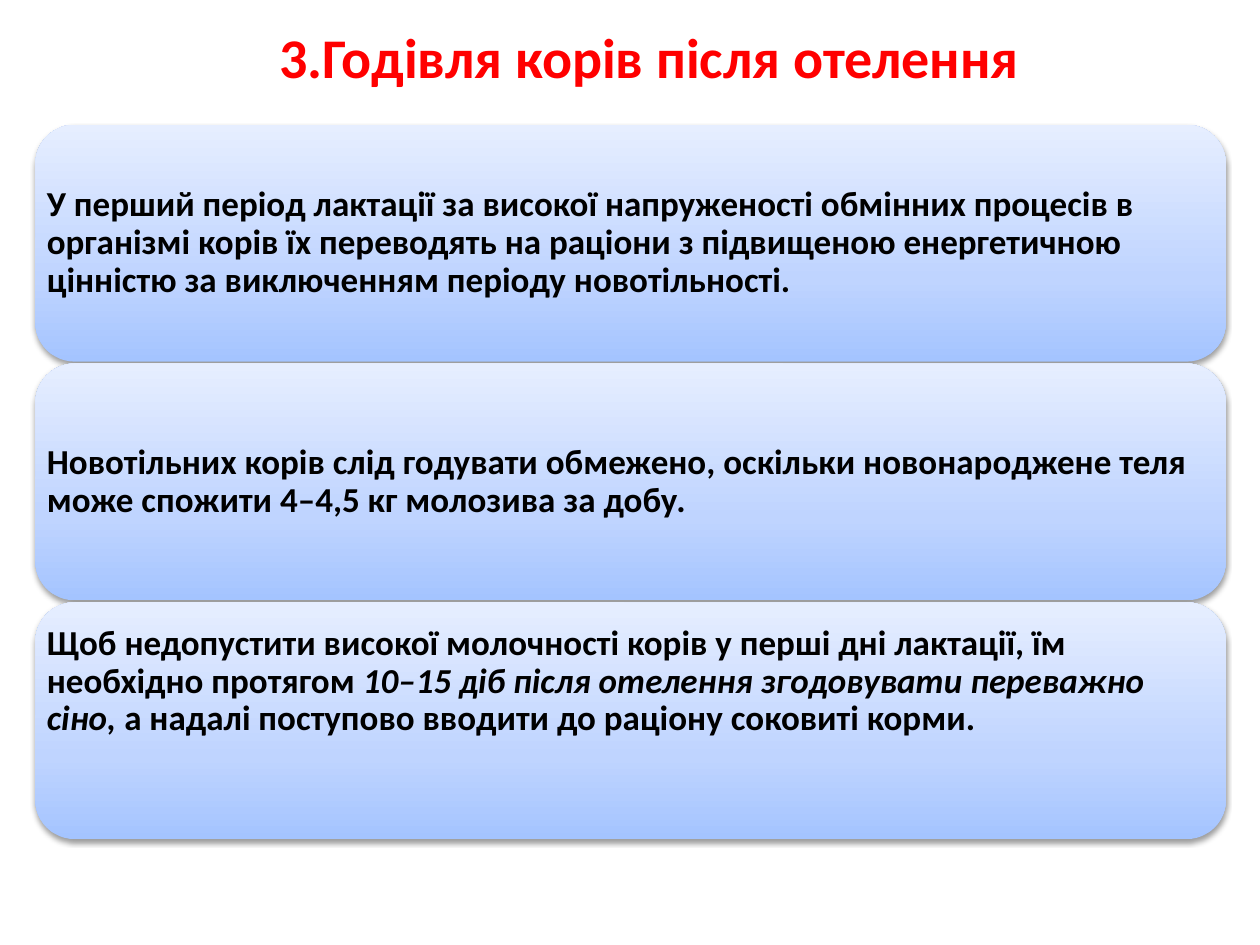
import pptx
import pptx.util
import pptx.dml.color
import pptx.enum.shapes
import pptx.enum.text
import pptx.oxml
import pptx.oxml.ns

Inches, Pt = pptx.util.Inches, pptx.util.Pt
RGB = pptx.dml.color.RGBColor.from_string
NAMESPACE = pptx.oxml.ns.nsdecls("a")

THEME = {
    "font": "Calibri",
    "title_size": Pt(32),
    "title_color": RGB("FF0000"),
    "body_size": Pt(20),
    "body_color": RGB("000000"),
    "gradient": [(0, "A4C4FF"), (35, "BFD4FF"), (100, "E6EEFF")],
}

# Each card holds (text, italic) runs and the extra space kept below its text.
CARDS = [
    ([("У перший період лактації за високої напруженості обмінних процесів в "
       "організмі корів їх переводять на раціони з підвищеною енергетичною "
       "цінністю за виключенням періоду новотільності.", False)], 0),
    ([("Новотільних корів слід годувати обмежено, оскільки новонароджене теля "
       "може спожити 4–4,5 кг молозива за добу.", False)], 0),
    ([("Щоб недопустити високої молочності корів у перші дні лактації, їм "
       "необхідно протягом ", False),
      ("10–15 діб після отелення згодовувати переважно сіно,", True),
      (" а надалі поступово вводити до раціону соковиті корми.", False)], 0.62),
]
CARD_LEFT, CARD_TOP, CARD_WIDTH, CARD_HEIGHT = 0.28, 0.99, 9.45, 1.88
ROW_PITCH = 1.895


def style_card(shape):
    """Give the card a vertical gradient, no outline and a soft shadow."""
    shape.line.fill.background()
    shape.fill.gradient()
    shape.fill.gradient_angle = 90
    stops = shape._element.spPr.find(".//" + pptx.oxml.ns.qn("a:gsLst"))
    for stop in list(stops):
        stops.remove(stop)
    for position, color in THEME["gradient"]:
        stops.append(pptx.oxml.parse_xml(
            f'<a:gs {NAMESPACE} pos="{position * 1000}"><a:srgbClr val="{color}"/></a:gs>'))
    shape.shadow.inherit = False
    effects = shape._element.spPr.find(pptx.oxml.ns.qn("a:effectLst"))
    effects.append(pptx.oxml.parse_xml(
        f'<a:outerShdw {NAMESPACE} blurRad="{Pt(3.1)}" dist="{Pt(1.6)}" dir="5400000" '
        'rotWithShape="0"><a:srgbClr val="000000"><a:alpha val="38000"/></a:srgbClr>'
        '</a:outerShdw>'))


def set_font(paragraph, size, color):
    paragraph.font.name = THEME["font"]
    paragraph.font.size = size
    paragraph.font.bold = True
    paragraph.font.color.rgb = color


presentation = pptx.Presentation()
presentation.slide_width, presentation.slide_height = Inches(10), Inches(7.5)
slide = presentation.slides.add_slide(presentation.slide_layouts[5])

title = slide.shapes.title
title.left, title.top = Inches(0.51), Inches(0.13)
title.width, title.height = Inches(9.29), Inches(1.72)
title.text_frame.text = "3.Годівля корів після отелення"
title.text_frame.vertical_anchor = pptx.enum.text.MSO_ANCHOR.TOP
title.text_frame.paragraphs[0].alignment = pptx.enum.text.PP_ALIGN.CENTER
set_font(title.text_frame.paragraphs[0], THEME["title_size"], THEME["title_color"])

for row, (runs, space_below) in enumerate(CARDS):
    card = slide.shapes.add_shape(
        pptx.enum.shapes.MSO_SHAPE.ROUNDED_RECTANGLE,
        Inches(CARD_LEFT), Inches(CARD_TOP + row * ROW_PITCH),
        Inches(CARD_WIDTH), Inches(CARD_HEIGHT))
    style_card(card)
    frame = card.text_frame
    frame.word_wrap = True
    frame.vertical_anchor = pptx.enum.text.MSO_ANCHOR.MIDDLE
    frame.margin_left = frame.margin_right = frame.margin_top = 0
    frame.margin_bottom = Inches(space_below)
    paragraph = frame.paragraphs[0]
    paragraph.alignment = pptx.enum.text.PP_ALIGN.LEFT
    paragraph.line_spacing = 0.9
    set_font(paragraph, THEME["body_size"], THEME["body_color"])
    for text, italic in runs:
        run = paragraph.add_run()
        run.text = text
        if italic:
            run.font.italic = True

presentation.save("out.pptx")
